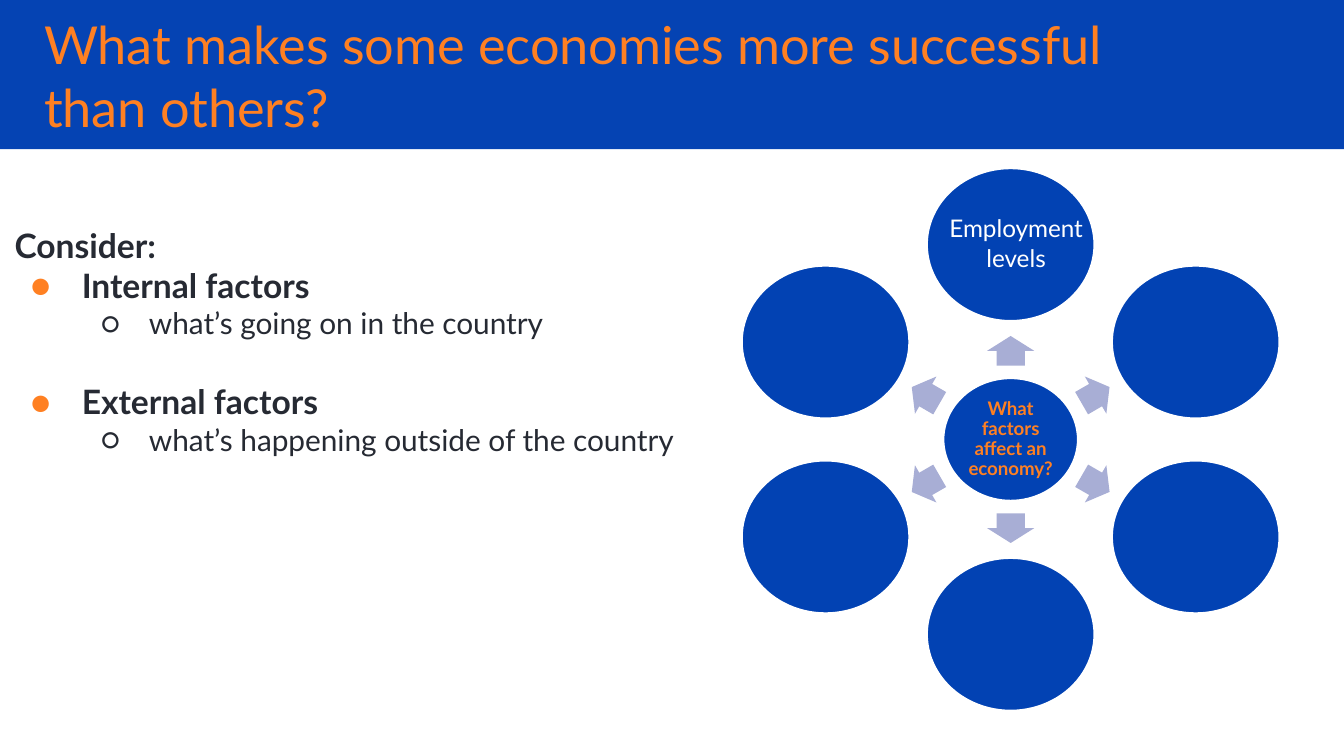
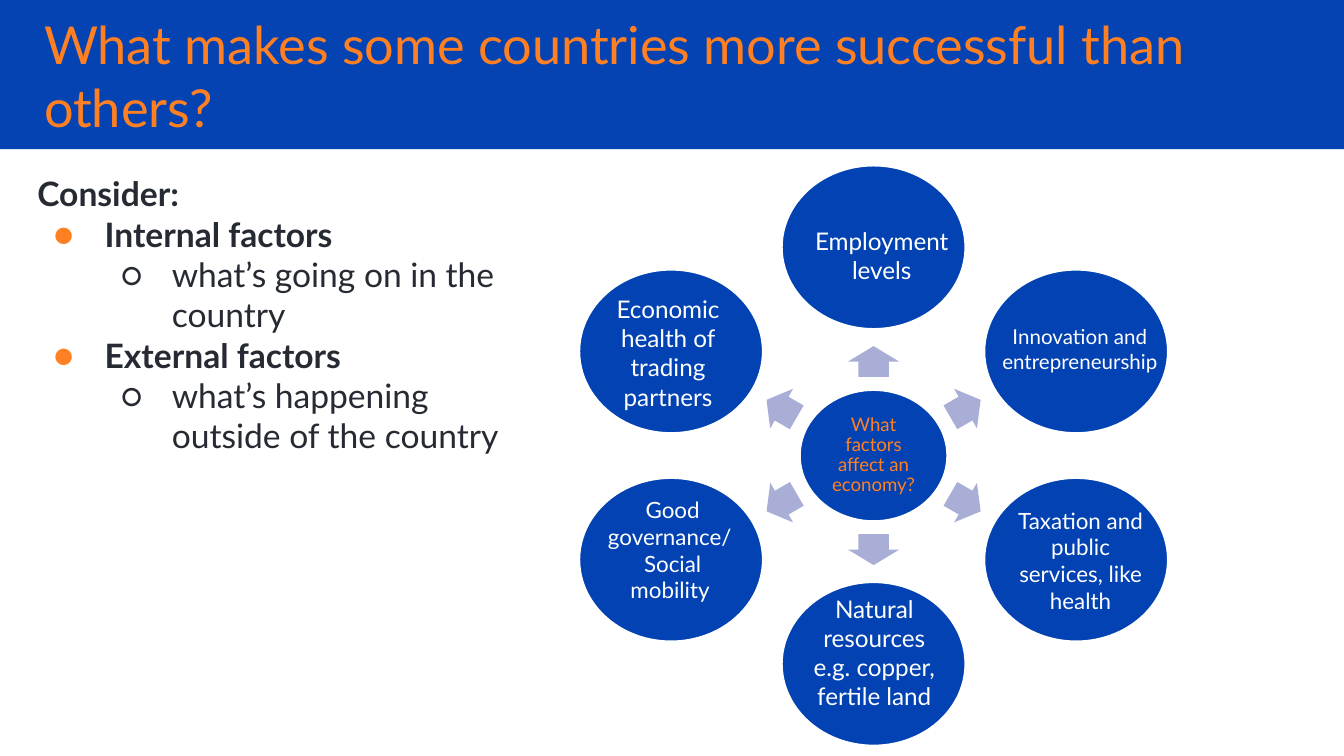
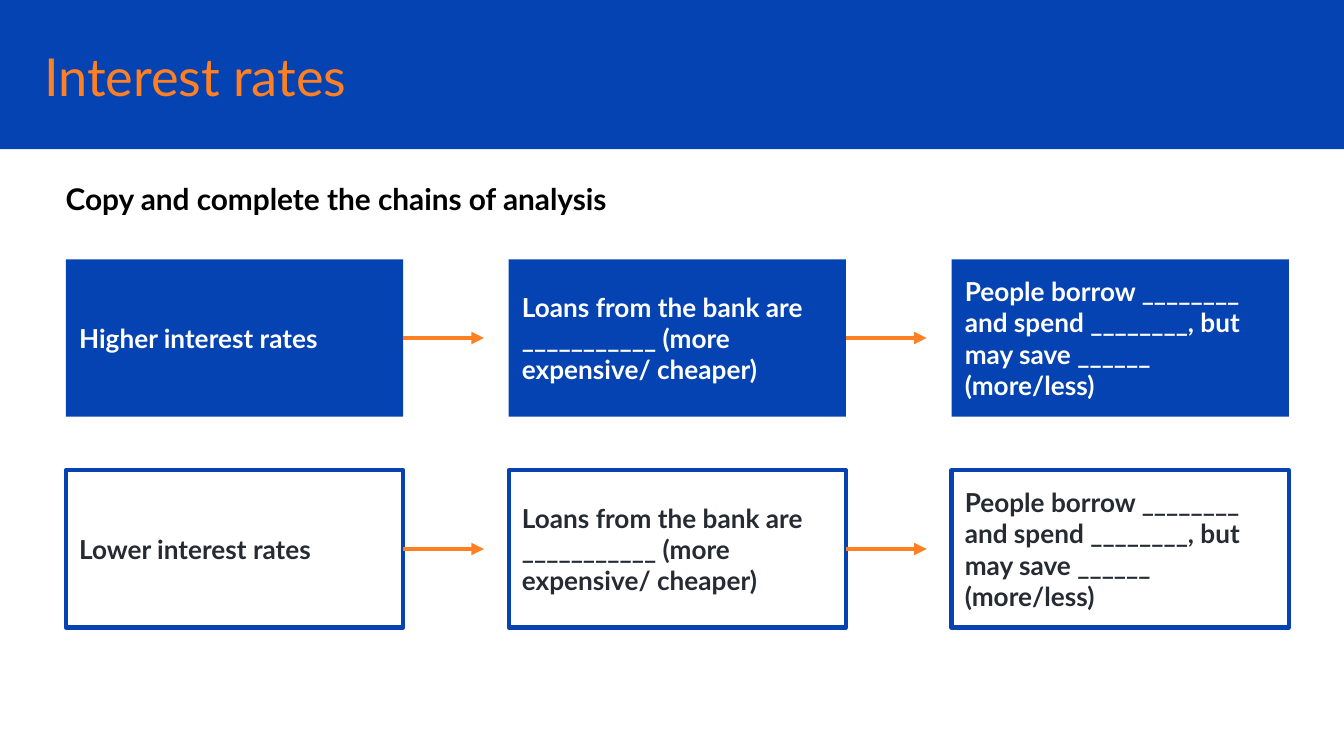
import math

import pptx
import pptx.dml.color
import pptx.enum.shapes
import pptx.enum.text
import pptx.oxml
import pptx.oxml.ns
import pptx.util
from pptx.util import Inches

COLORS = {
    "band": "0543B3",
    "circle": "0242B3",
    "arrow": "A8AED5",
    "accent": "FF8022",
    "text": "262A33",
    "black": "000000",
    "white": "FFFFFF",
}
SHAPES = pptx.enum.shapes.MSO_SHAPE
ALIGN = pptx.enum.text.PP_ALIGN
ANCHOR = pptx.enum.text.MSO_ANCHOR


def rgb(name):
    return pptx.dml.color.RGBColor.from_string(COLORS[name])


def add_xml(parent, tag, **attributes):
    element = pptx.oxml.parse_xml(f'<a:{tag} {pptx.oxml.ns.nsdecls("a")}/>')
    for key, value in attributes.items():
        element.set(key, str(value))
    parent.append(element)
    return element


class Deck:
    """Holds the shared style and the slide being filled."""

    font_name = "Lato"

    def __init__(self):
        self.presentation = pptx.Presentation()
        self.presentation.slide_width = Inches(10)
        self.presentation.slide_height = Inches(10) * 9 // 16
        self.slide = None

    def new_slide(self, title):
        self.slide = self.presentation.slides.add_slide(self.presentation.slide_layouts[6])
        self.shape(SHAPES.RECTANGLE, (0, 0, 10, 1.11), "band")
        self.text([title], (0.23, 0.28, 8.74, 0.56), 28, "accent", middle=True, grow=False)

    def style(self, paragraph, size, color, bold=False, align=ALIGN.LEFT):
        paragraph.alignment = align
        paragraph.font.name = self.font_name
        paragraph.font.size = pptx.util.Pt(size)
        paragraph.font.color.rgb = rgb(color)
        paragraph.font.bold = bold

    def frame(self, shape, inset=0.1, middle=False):
        frame = shape.text_frame
        frame.word_wrap = True
        frame.margin_left = frame.margin_right = Inches(inset)
        frame.margin_top = frame.margin_bottom = Inches(inset)
        frame.vertical_anchor = ANCHOR.MIDDLE if middle else ANCHOR.TOP
        return frame

    def shape(self, kind, box, fill, line=None, line_width=2.25):
        shape = self.slide.shapes.add_shape(kind, *map(Inches, box))
        shape.shadow.inherit = False
        shape.fill.solid()
        shape.fill.fore_color.rgb = rgb(fill)
        if line:
            shape.line.color.rgb = rgb(line)
            shape.line.width = pptx.util.Pt(line_width)
        else:
            shape.line.fill.background()
        return shape

    def text_box(self, box, middle=False, grow=True):
        frame = self.frame(self.slide.shapes.add_textbox(*map(Inches, box)), middle=middle)
        if grow:
            frame.auto_size = pptx.enum.text.MSO_AUTO_SIZE.SHAPE_TO_FIT_TEXT
        return frame

    def text(self, lines, box, size, color, bold=False, align=ALIGN.LEFT, middle=False, grow=True):
        frame = self.text_box(box, middle, grow)
        frame.text = "\n".join(lines)
        for paragraph in frame.paragraphs:
            self.style(paragraph, size, color, bold, align)

    def bullet(self, paragraph, level, hanging):
        paragraph.level = level
        properties = paragraph._p.get_or_add_pPr()
        properties.set("marL", str(Inches(0.5 * (level + 1))))
        properties.set("indent", str(-Inches(hanging)))
        bullet_color = add_xml(properties, "buClr")
        add_xml(bullet_color, "srgbClr", val=COLORS["text" if level else "accent"])
        add_xml(properties, "buFont", typeface=self.font_name)
        add_xml(properties, "buChar", char="○" if level else "●")

    def factors(self, box, detail_size, detail_hanging, gap=0):
        """The 'Consider' list; gap is the space in points between its two groups."""
        frame = self.text_box(box)
        frame.text = "Consider:"
        self.style(frame.paragraphs[0], 18, "text", bold=True)
        groups = [
            ("Internal factors", "what’s going on in the country", 0),
            ("External factors", "what’s happening outside of the country", gap),
        ]
        for heading, detail, space in groups:
            paragraph = frame.add_paragraph()
            paragraph.text = heading
            self.bullet(paragraph, 0, 0.38)
            paragraph.space_before = pptx.util.Pt(space)
            self.style(paragraph, 18, "text", bold=True)
            paragraph = frame.add_paragraph()
            paragraph.text = detail
            self.bullet(paragraph, 1, detail_hanging)
            self.style(paragraph, detail_size, "text")

    def centred(self, kind, center, size, fill, line=None):
        (x, y), (width, height) = center, size
        return self.shape(kind, (x - width / 2, y - height / 2, width, height), fill, line, 2)

    def wheel(self, center, circle, orbit, arrow_orbit, upright_arrow, slanted_arrow, bold):
        """A hub with six circles around it and an arrow towards each."""

        def around(radii, angle):
            turn = math.radians(angle)
            return center[0] + radii[0] * math.cos(turn), center[1] + radii[1] * math.sin(turn)

        hub_size = [0.805 * length for length in circle]
        hub = self.centred(SHAPES.OVAL, center, hub_size, "circle", "white")
        frame = self.frame(hub, inset=0.01, middle=True)
        frame.text = "What factors affect an economy?"
        frame.paragraphs[0].line_spacing = 0.9
        self.style(frame.paragraphs[0], 10, "accent", bold, ALIGN.CENTER)
        for angle in range(-90, 270, 60):
            arrow_size = slanted_arrow if angle % 180 != 90 else upright_arrow
            arrow = self.centred(SHAPES.RIGHT_ARROW, around(arrow_orbit, angle), arrow_size, "arrow")
            arrow.adjustments[0], arrow.adjustments[1] = 0.6, 0.5
            arrow.rotation = angle % 360
            self.centred(SHAPES.OVAL, around(orbit, angle), circle, "circle", "white")

    def circle_label(self, lines, box, size):
        self.text(lines, box, size, "white", align=ALIGN.CENTER)

    def arrow_from(self, box, length):
        y = box.top + box.height // 2
        start = box.left + box.width
        connector = self.slide.shapes.add_connector(
            pptx.enum.shapes.MSO_CONNECTOR.STRAIGHT, start, y, start + Inches(length), y)
        connector.begin_connect(box, 3)
        connector.line.color.rgb = rgb("accent")
        connector.line.width = pptx.util.Pt(2.25)
        add_xml(connector.line._get_or_add_ln(), "tailEnd", type="triangle")
        add_xml(connector._element.spPr, "effectLst")

    def chain(self, steps, top, fill, line, color):
        boxes = []
        for column, step in enumerate(steps):
            box = self.shape(SHAPES.RECTANGLE, (0.49 + 3.295 * column, top, 2.51, 1.17), fill, line)
            frame = self.frame(box, middle=True)
            frame.text = step
            self.style(frame.paragraphs[0], 14, color, bold=True)
            boxes.append(box)
        for box in boxes[:-1]:
            self.arrow_from(box, 0.6)


def economies_slide(deck):
    deck.new_slide("What makes some economies more successful than others?")
    deck.factors((0.01, 1.57, 5.21, 2.52), detail_size=16, detail_hanging=0.36, gap=21.6)
    deck.wheel(center=(7.52, 3.27), circle=(1.26, 1.15), orbit=(1.59, 1.45),
               arrow_orbit=(0.73, 0.66), upright_arrow=(0.22, 0.35),
               slanted_arrow=(0.24, 0.32), bold=True)
    deck.circle_label(["Employment levels"], (6.92, 1.49, 1.28, 0.64), 13)


def countries_slide(deck):
    deck.new_slide("What makes some countries more successful than others?")
    deck.wheel(center=(6.5, 3.39), circle=(1.38, 1.23), orbit=(1.74, 1.55),
               arrow_orbit=(0.79, 0.7), upright_arrow=(0.23, 0.38),
               slanted_arrow=(0.26, 0.34), bold=False)
    labels = [
        (["Economic health of trading partners"], (4.33, 2.09, 1.28, 1.08), 13),
        (["Employment levels"], (5.92, 1.58, 1.28, 0.64), 13),
        (["Innovation and entrepreneurship"], (7.34, 2.31, 1.39, 0.57), 11),
        (["Taxation and public services, like health"], (7.4, 3.67, 1.28, 1.01), 12),
        (["Good governance/ ", "Social mobility "], (4.41, 3.59, 1.19, 1.01), 12),
        (["Natural resources e.g. copper, fertile land"], (5.91, 4.32, 1.19, 1.08), 13),
    ]
    for lines, box, size in labels:
        deck.circle_label(lines, box, size)
    deck.factors((0.18, 1.19, 3.92, 2.9), detail_size=18, detail_hanging=0.38)


def interest_slide(deck):
    deck.new_slide("Interest rates")
    deck.text(["Copy and complete the chains of analysis"], (0.39, 1.24, 4.82, 0.47),
              16, "black", bold=True, middle=True)
    effects = [
        "Loans from the bank are ___________ (more expensive/ cheaper)",
        "People borrow ________ and spend ________, but may save ______ (more/less)",
    ]
    deck.chain(["Higher interest rates", *effects], 1.93, "band", None, "white")
    deck.chain(["Lower interest rates", *effects], 3.5, "white", "band", "text")


def main():
    deck = Deck()
    economies_slide(deck)
    countries_slide(deck)
    interest_slide(deck)
    deck.presentation.save("out.pptx")


if __name__ == "__main__":
    main()
